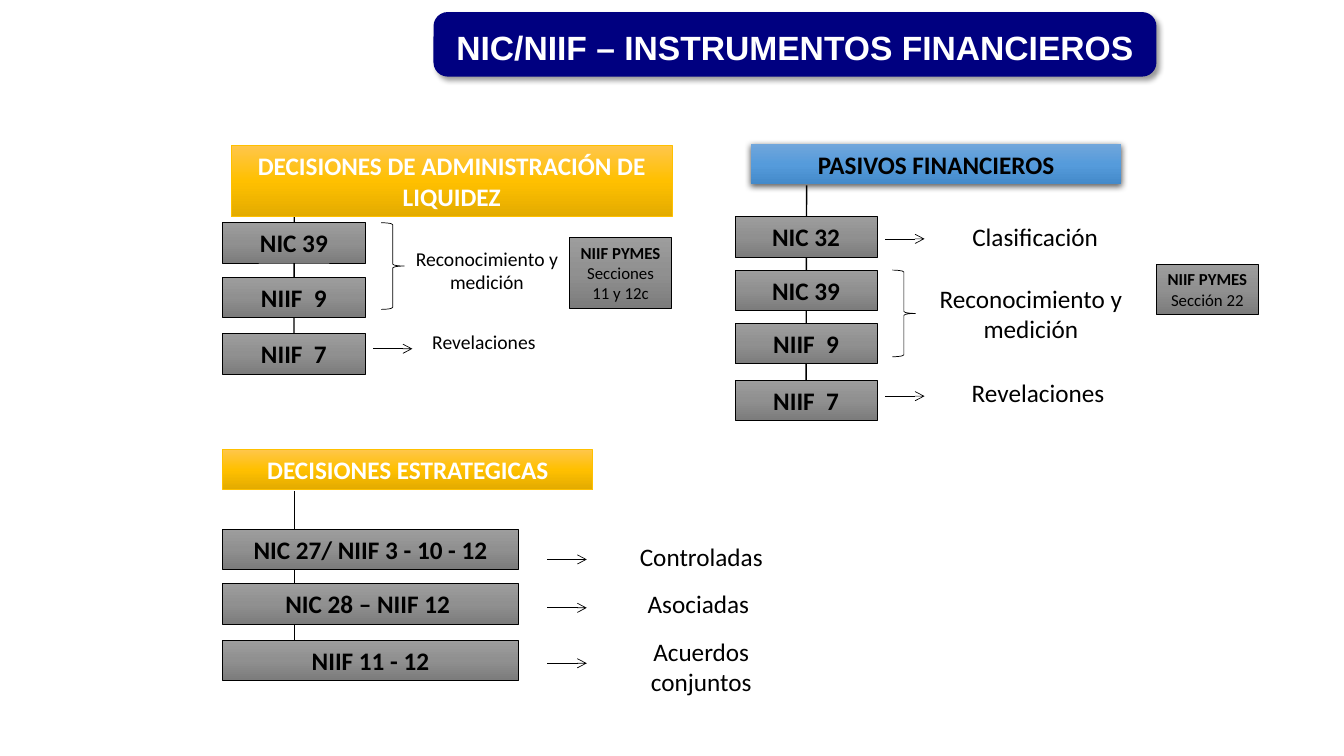
from dataclasses import dataclass
from typing import Optional

from copy import deepcopy
from lxml import etree
from pptx import Presentation
from pptx.dml.color import RGBColor
from pptx.enum.shapes import MSO_CONNECTOR as Connector, MSO_SHAPE as Preset
from pptx.enum.text import MSO_ANCHOR as Anchor, MSO_AUTO_SIZE as AutoSize, PP_ALIGN as Align
from pptx.oxml.ns import qn
from pptx.util import Inches, Pt

BLACK = RGBColor(0x00, 0x00, 0x00)
WHITE = RGBColor(0xFF, 0xFF, 0xFF)
NAVY = RGBColor(0x00, 0x00, 0x80)
GOLD = RGBColor(0xFF, 0xC0, 0x00)
GOLD_SHADES = (RGBColor(0xFF, 0xC6, 0x4B), GOLD, RGBColor(0xE3, 0xAB, 0x00))
GREY_SHADES = (RGBColor(0x9D, 0x9D, 0x9D), RGBColor(0x90, 0x90, 0x90), RGBColor(0x7C, 0x7C, 0x7C))
BLUE_SHADES = (RGBColor(0x71, 0xA6, 0xDB), RGBColor(0x55, 0x9B, 0xDB), RGBColor(0x44, 0x8A, 0xCA))
ROW_HEIGHT = 0.4
ARROW_LENGTH = 0.39
BRACE_SIZE = (0.23, 0.86)


@dataclass
class Box:
    text: str
    left: float
    top: float
    width: float
    height: float = ROW_HEIGHT
    size: int = 18


@dataclass
class Shadow:
    alpha: int
    blur: float
    distance: float
    angle: int


@dataclass
class Branch:
    heading: Box
    shades: tuple
    color: RGBColor
    outline: Optional[RGBColor]
    shadow: Optional[Shadow]
    left: float
    top: float
    width: float
    standards: dict[str, float]
    trunk: tuple[float, float, float]
    trunk_site: Optional[int]


BRANCHES = [
    Branch(Box("DECISIONES DE ADMINISTRACIÓN DE LIQUIDEZ", 2.29, 1.44, 4.38, 0.71),
           GOLD_SHADES, WHITE, GOLD, None, 2.21, 2.21, 1.41,
           {"NIC 39": 0, "NIIF  9": 0.54, "NIIF  7": 1.1}, (2.92, 1.76, 3.71), 2),
    Branch(Box("DECISIONES ESTRATEGICAS", 2.21, 4.46, 3.67),
           GOLD_SHADES, WHITE, GOLD, None, 2.21, 5.25, 2.93,
           {"NIC 27/ NIIF 3 - 10 - 12": 0, "NIC 28 – NIIF 12 ": 0.54, "NIIF 11 - 12": 1.1},
           (2.92, 4.87, 6.75), None),
    Branch(Box("PASIVOS FINANCIEROS", 7.45, 1.43, 3.67),
           BLUE_SHADES, BLACK, None, Shadow(63, 4.5, 1.5, 90), 7.29, 2.15, 1.41,
           {"NIC 32": 0, "NIC 39": 0.53, "NIIF  9": 1.06, "NIIF  7": 1.62},
           (8, 1.84, 3.77), 0),
]
TOPICS = [
    Box("Reconocimiento y medición", 4.01, 2.4, 1.64, 0.57, 14),
    Box("Revelaciones", 4.17, 3.22, 1.26, 0.34, 14),
    Box("Controladas", 5.9, 5.32, 2.11),
    Box("Asociadas ", 5.9, 5.79, 2.11),
    Box("Acuerdos conjuntos", 5.9, 6.26, 2.11, 0.71),
    Box("Clasificación ", 9.24, 2.15, 2.11),
    Box("Reconocimiento y medición", 9.09, 2.76, 2.27, 0.71),
    Box("Revelaciones", 9.24, 3.69, 2.11),
]
SME_SECTIONS = [
    Box("NIIF PYMES \nSecciones 11 y 12c", 5.65, 2.35, 1.01, 0.71, 12),
    Box("NIIF PYMES \nSección 22", 11.47, 2.62, 1.01, 0.5, 12),
]
ARROWS = [(3.7, 3.46), (5.43, 5.55), (5.43, 6.03), (5.43, 6.58), (8.78, 2.37), (8.78, 3.93)]
BRACES = [(3.78, 2.21), (8.85, 2.68)]


def add_shadow(shape, shadow: Shadow) -> None:
    effects = shape._element.spPr.find(qn("a:effectLst"))
    outer = etree.SubElement(effects, qn("a:outerShdw"), blurRad=str(Pt(shadow.blur)),
                             dist=str(Pt(shadow.distance)), dir=str(shadow.angle * 60000),
                             algn="ctr", rotWithShape="0")
    color = etree.SubElement(outer, qn("a:srgbClr"), val=str(BLACK))
    etree.SubElement(color, qn("a:alpha"), val=str(shadow.alpha * 1000))


def fill_gradient(shape, shades: tuple) -> None:
    shape.fill.gradient()
    shape.fill.gradient_angle = 270
    stop_list = shape._element.spPr.find(qn("a:gradFill")).find(qn("a:gsLst"))
    stop_list.insert(1, deepcopy(stop_list[0]))
    for stop, position, shade in zip(shape.fill.gradient_stops, (0, 0.5, 1), shades):
        stop.position = position
        stop.color.rgb = shade


def write_text(shape, box: Box, color: RGBColor, bold: bool, font: str = "Calibri") -> None:
    frame = shape.text_frame
    frame.text = box.text
    frame.word_wrap = True
    frame.auto_size = AutoSize.SHAPE_TO_FIT_TEXT
    for index, paragraph in enumerate(frame.paragraphs):
        paragraph.alignment = Align.CENTER
        paragraph.font.name = font
        paragraph.font.size = Pt(box.size)
        paragraph.font.bold = bold and index == 0
        paragraph.font.color.rgb = color


def add_preset(slide, preset, left: float, top: float, width: float, height: float,
               outline: Optional[RGBColor]):
    shape = slide.shapes.add_shape(preset, Inches(left), Inches(top), Inches(width), Inches(height))
    shape.shadow.inherit = False
    if outline is None:
        shape.line.fill.background()
    else:
        shape.line.color.rgb = outline
        shape.line.width = Pt(0.5)
    return shape


def add_panel(slide, box: Box, shades: tuple, color: RGBColor = BLACK,
              outline: Optional[RGBColor] = BLACK):
    panel = add_preset(slide, Preset.RECTANGLE, box.left, box.top, box.width, box.height, outline)
    fill_gradient(panel, shades)
    write_text(panel, box, color, True)
    return panel


def add_line(slide, x1: float, y1: float, x2: float, y2: float, width: float):
    line = slide.shapes.add_connector(Connector.STRAIGHT, Inches(x1), Inches(y1),
                                      Inches(x2), Inches(y2))
    line.line.color.rgb = BLACK
    line.line.width = Pt(width)
    etree.SubElement(line._element.spPr, qn("a:effectLst"))
    return line


def add_branch(slide, branch: Branch) -> None:
    x, start, end = branch.trunk
    trunk = add_line(slide, x, start, x, end, 1)
    heading = add_panel(slide, branch.heading, branch.shades, branch.color, branch.outline)
    if branch.shadow:
        add_shadow(heading, branch.shadow)
    for standard, offset in branch.standards.items():
        box = Box(standard, branch.left, branch.top + offset, branch.width)
        last_panel = add_panel(slide, box, GREY_SHADES)
    if branch.trunk_site is not None:
        trunk.end_connect(last_panel, branch.trunk_site)


def add_title(slide) -> None:
    box = Box("NIC/NIIF – INSTRUMENTOS FINANCIEROS", 4.3, 0.12, 7.17, 0.64, 24)
    title = add_preset(slide, Preset.ROUNDED_RECTANGLE, box.left, box.top, box.width, box.height, None)
    title.adjustments[0] = 0.22
    title.fill.solid()
    title.fill.fore_color.rgb = NAVY
    add_shadow(title, Shadow(40, 4, 3, 45))
    write_text(title, box, WHITE, True, "Arial")
    title.text_frame.auto_size = AutoSize.NONE
    title.text_frame.vertical_anchor = Anchor.BOTTOM


def main() -> None:
    presentation = Presentation()
    presentation.slide_width = Inches(13.33)
    presentation.slide_height = Inches(7.5)
    slide = presentation.slides.add_slide(presentation.slide_layouts[6])
    add_title(slide)
    for branch in BRANCHES:
        add_branch(slide, branch)
    for topic in TOPICS:
        label = slide.shapes.add_textbox(Inches(topic.left), Inches(topic.top),
                                         Inches(topic.width), Inches(topic.height))
        write_text(label, topic, BLACK, False)
    for left, top in BRACES:
        brace = add_preset(slide, Preset.RIGHT_BRACE, left, top, *BRACE_SIZE, BLACK)
        brace.fill.background()
    for x, y in ARROWS:
        arrow = add_line(slide, x, y, x + ARROW_LENGTH, y, 0.5)
        etree.SubElement(arrow.line._get_or_add_ln(), qn("a:tailEnd"), type="arrow")
    for section in SME_SECTIONS:
        add_panel(slide, section, GREY_SHADES)
    presentation.save("out.pptx")


if __name__ == "__main__":
    main()
